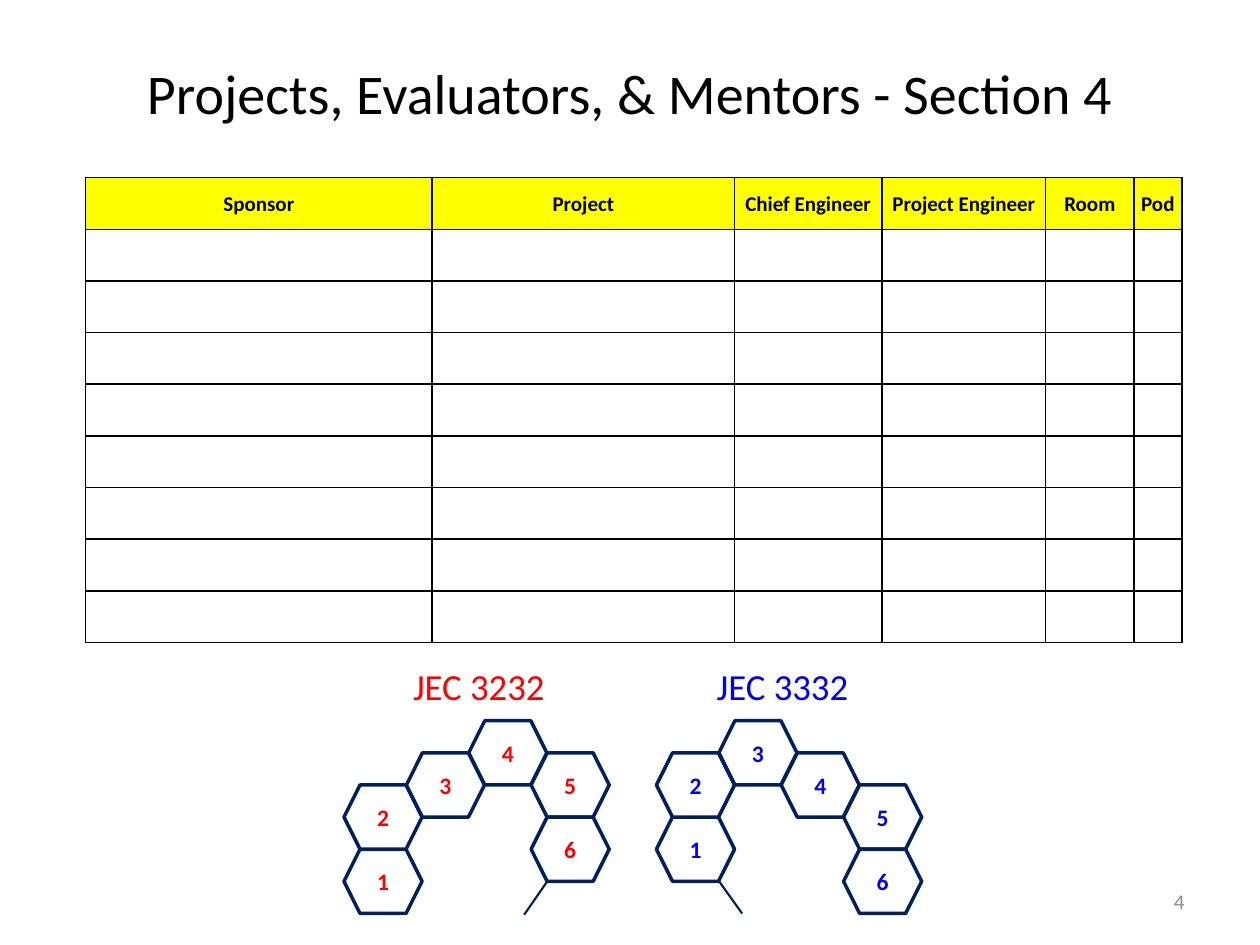
from lxml import etree
from pptx import Presentation
from pptx.dml.color import RGBColor
from pptx.enum.shapes import MSO_CONNECTOR, MSO_SHAPE
from pptx.enum.text import MSO_ANCHOR as ANCHOR, PP_ALIGN as ALIGN
from pptx.oxml import parse_xml
from pptx.oxml.ns import nsdecls, qn
from pptx.util import Inches, Pt

FONT = "Calibri"
BLACK, WHITE, YELLOW, NAVY = "000000", "FFFFFF", "FFFF00", "002060"
RED, BLUE, GRAY = "FF0000", "0000FF", "8C8C8C"

COLUMNS = [("Sponsor", 2.75), ("Project", 2.4), ("Chief Engineer", 1.17),
           ("Project Engineer", 1.3), ("Room", 0.7), ("Pod", 0.38)]
ROWS, ROW_H = 9, 0.41

POD_W, POD_H = 0.62, 0.51
POD_STEP = 0.495
# Column and half-row of pods 1 to 6 in each room
RED_PODS = [(0, 4), (0, 2), (1, 1), (2, 0), (3, 1), (3, 3)]
BLUE_PODS = [(0, 3), (0, 1), (1, 0), (2, 1), (3, 2), (3, 4)]


def rgb(color):
    return RGBColor.from_string(color)


def style_text(tf, size, color, align, bold=False):
    for p in tf.paragraphs:
        p.alignment = align
        for r in p.runs:
            r.font.name, r.font.size, r.font.bold = FONT, Pt(size), bold
            r.font.color.rgb = rgb(color)


def add_text(slide, text, box, size, color, align, anchor=ANCHOR.MIDDLE, wrap=True):
    tf = slide.shapes.add_textbox(*map(Inches, box)).text_frame
    tf.text = text
    tf.word_wrap = wrap
    tf.vertical_anchor = anchor
    style_text(tf, size, color, align)


def add_borders(cell):
    tc_pr = cell._tc.get_or_add_tcPr()
    for i, side in enumerate(("lnL", "lnR", "lnT", "lnB")):
        tc_pr.insert(i, parse_xml(
            f'<a:{side} {nsdecls("a")} w="{Pt(1)}"><a:solidFill>'
            f'<a:srgbClr val="{BLACK}"/></a:solidFill></a:{side}>'))


def add_project_table(slide, left, top):
    width = sum(w for _, w in COLUMNS)
    box = map(Inches, (left, top, width, ROWS * ROW_H))
    table = slide.shapes.add_table(ROWS, len(COLUMNS), *box).table
    for row in table.rows:
        row.height = Inches(ROW_H)
    for col, (_, w) in zip(table.columns, COLUMNS):
        col.width = Inches(w)
    for cell in table.iter_cells():
        cell.fill.solid()
        cell.fill.fore_color.rgb = rgb(WHITE)
        cell.vertical_anchor = ANCHOR.MIDDLE
        cell.margin_left = cell.margin_right = cell.margin_top = Inches(0.01)
        cell.margin_bottom = 0
        add_borders(cell)
    for cell, (name, _) in zip(table.rows[0].cells, COLUMNS):
        cell.fill.fore_color.rgb = rgb(YELLOW)
        cell.text = name
        style_text(cell.text_frame, 12, BLACK, ALIGN.CENTER, bold=True)


def add_pod(slide, number, left, top, color):
    sp = slide.shapes.add_shape(MSO_SHAPE.HEXAGON,
                                *map(Inches, (left, top, POD_W, POD_H)))
    sp.shadow.inherit = False
    sp.fill.solid()
    sp.fill.fore_color.rgb = rgb(WHITE)
    sp.line.color.rgb = rgb(NAVY)
    sp.line.width = Pt(2)
    tf = sp.text_frame
    tf.margin_left = tf.margin_right = tf.margin_top = tf.margin_bottom = 0
    tf.vertical_anchor = ANCHOR.MIDDLE
    tf.text = str(number)
    style_text(tf, 13.5, color, ALIGN.CENTER, bold=True)


def add_door(slide, start, end):
    line = slide.shapes.add_connector(MSO_CONNECTOR.STRAIGHT,
                                      *map(Inches, (*start, *end)))
    line.line.color.rgb = rgb(NAVY)
    line.line.width = Pt(1.25)
    etree.SubElement(line._element.spPr, qn("a:effectLst"))


def add_room(slide, left, top, name, name_left, pods, color, door):
    """Room name, door line and numbered pods; positions count from left, top."""
    add_text(slide, name, (left + name_left, top, 1.26, 0.5), 21, color,
             ALIGN.LEFT, ANCHOR.TOP, wrap=False)
    add_door(slide, *[(left + x, top + y) for x, y in door])
    for number, (col, half_row) in enumerate(pods, start=1):
        add_pod(slide, number, left + col * POD_STEP,
                top + 0.5 + half_row * POD_H / 2, color)


def main():
    prs = Presentation()
    prs.slide_width, prs.slide_height = Inches(10), Inches(7.5)
    slide = prs.slides.add_slide(prs.slide_layouts[6])
    add_text(slide, "Projects, Evaluators, & Mentors - Section 4",
             (0.5, 0.3, 9, 0.87), 32, BLACK, ALIGN.CENTER)
    add_project_table(slide, 0.68, 1.41)
    add_text(slide, "4", (7.17, 6.95, 2.33, 0.4), 12, GRAY, ALIGN.RIGHT)
    add_room(slide, 5.21, 5.22, "JEC 3332", 0.38, BLUE_PODS, BLUE,
             [(0.13, 1.26), (0.68, 2.03)])
    add_room(slide, 2.73, 5.22, "JEC 3232", 0.45, RED_PODS, RED,
             [(1.97, 1.26), (1.43, 2.04)])
    prs.save("out.pptx")


if __name__ == "__main__":
    main()
